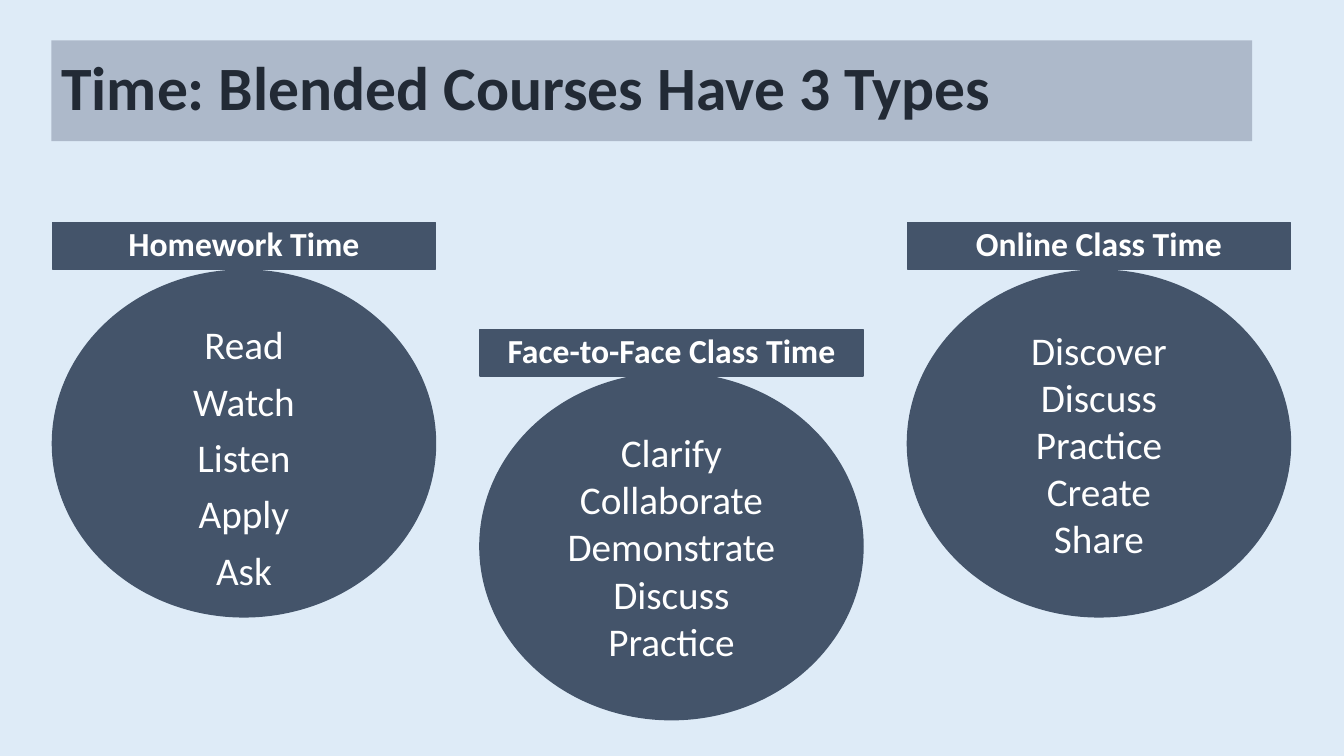
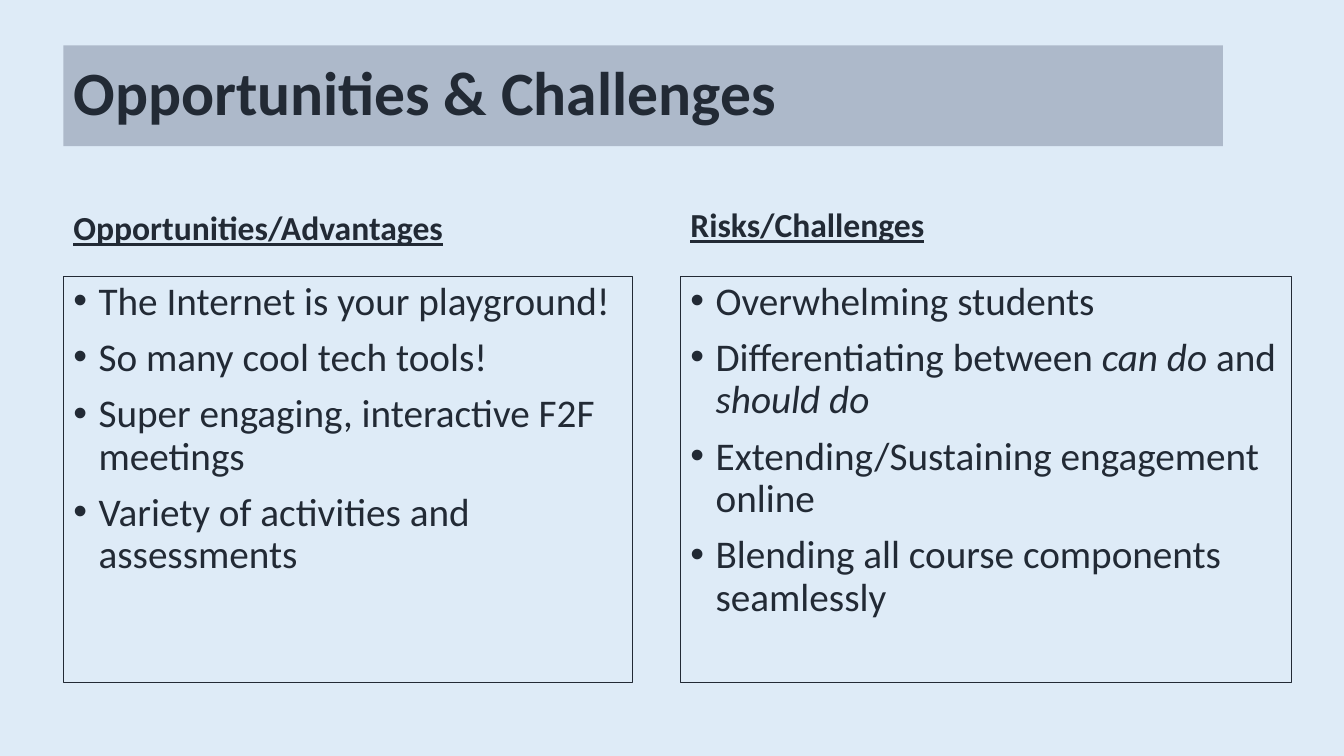
from pptx import Presentation
from pptx.dml.color import RGBColor
from pptx.enum.shapes import MSO_SHAPE as Shape
from pptx.enum.text import MSO_ANCHOR as Anchor, PP_ALIGN as Align
from pptx.oxml.ns import qn
from pptx.util import Inches, Pt
from lxml import etree

PALE_BLUE = RGBColor(0xDE, 0xEB, 0xF7)
GREY_BLUE = RGBColor(0xAD, 0xB9, 0xCA)
SLATE = RGBColor(0x44, 0x54, 0x6A)
INK = RGBColor(0x22, 0x2A, 0x35)
WHITE = RGBColor(0xFF, 0xFF, 0xFF)
FONT = "Calibri"
TIGHT = {"line_spacing": 0.9, "space_before": 10}

# Heading, heading top, circle top, activities, paragraph spacing
TIME_TYPES = [
    ("Homework Time", 2.21, 2.68,
     ["Read", "Watch", "Listen", "Apply", "Ask"], TIGHT),
    ("Face-to-Face Class Time", 3.27, 3.7,
     ["Clarify", "Collaborate", "Demonstrate", "Discuss", "Practice"], {}),
    ("Online Class Time", 2.21, 2.68,
     ["Discover", "Discuss", "Practice", "Create", "Share"], {}),
]
TYPE_LEFT, TYPE_STEP, TYPE_WIDTH = 0.52, 4.24, 3.8
HEADING_HEIGHT, CIRCLE_HEIGHT = 0.46, 3.44

# Heading, left, heading top, box width, points; in a tuple every second part is italic
COLUMNS = [
    ("Opportunities/Advantages", 0.63, 1.61, 5.64, [
        "The Internet is your playground!",
        "So many cool tech tools!",
        "Super engaging, interactive F2F meetings",
        "Variety of activities and assessments",
    ]),
    ("Risks/Challenges", 6.75, 1.58, 6.06, [
        "Overwhelming students",
        ("Differentiating between ", "can do ", "and ", "should do"),
        "Extending/Sustaining engagement online",
        "Blending all course components seamlessly",
    ]),
]
COLUMN_HEADING_HEIGHT, BOX_TOP, BOX_HEIGHT = 0.9, 2.74, 4.03


def add_box(slide, kind, left, top, width, height, fill=None, line=None, line_width=1):
    shape = slide.shapes.add_shape(
        kind, Inches(left), Inches(top), Inches(width), Inches(height))
    shape.shadow.inherit = False
    if fill is None:
        shape.fill.background()
    else:
        shape.fill.solid()
        shape.fill.fore_color.rgb = fill
    if line is None:
        shape.line.fill.background()
    else:
        shape.line.color.rgb = line
        shape.line.width = Pt(line_width)
    return shape


def add_bullet(paragraph):
    properties = paragraph._p.get_or_add_pPr()
    properties.set("marL", str(Inches(0.25)))
    properties.set("indent", str(-Inches(0.25)))
    etree.SubElement(properties, qn("a:buFont")).set("typeface", "Arial")
    etree.SubElement(properties, qn("a:buChar")).set("char", "•")


def write(shape, items, size, color, align=Align.LEFT, anchor=Anchor.TOP, bold=False,
          underline=False, bullets=False, line_spacing=1.0, space_before=0):
    """Fill a shape with one paragraph per item; an item is a string or a tuple of runs."""
    frame = shape.text_frame
    frame.word_wrap = True
    frame.vertical_anchor = anchor
    for index, item in enumerate(items):
        paragraph = frame.add_paragraph() if index else frame.paragraphs[0]
        if bullets:
            add_bullet(paragraph)
        paragraph.alignment = align
        paragraph.line_spacing = line_spacing
        paragraph.space_before = Pt(space_before if index else 0)
        parts = (item,) if isinstance(item, str) else item
        for position, text in enumerate(parts):
            run = paragraph.add_run()
            run.text = text
            font = run.font
            font.name, font.size, font.color.rgb = FONT, Pt(size), color
            font.bold, font.underline = bold, underline
            font.italic = position % 2 == 1


def add_titled_slide(presentation, title, left, top, width):
    slide = presentation.slides.add_slide(presentation.slide_layouts[6])
    band = add_box(slide, Shape.RECTANGLE, left, top, width, 1, fill=GREY_BLUE)
    write(band, [title], 44, INK, anchor=Anchor.MIDDLE, bold=True, line_spacing=0.9)
    return slide


def build_time_slide(presentation):
    slide = add_titled_slide(
        presentation, "Time: Blended Courses Have 3 Types", 0.51, 0.4, 11.91)
    for index, (name, heading_top, circle_top, activities, spacing) in enumerate(TIME_TYPES):
        left = TYPE_LEFT + index * TYPE_STEP
        circle = add_box(slide, Shape.OVAL, left, circle_top, TYPE_WIDTH, CIRCLE_HEIGHT,
                         fill=SLATE, line=SLATE)
        write(circle, activities, 28, WHITE, align=Align.CENTER, **spacing)
        heading = add_box(slide, Shape.RECTANGLE, left, heading_top, TYPE_WIDTH,
                          HEADING_HEIGHT, fill=SLATE, line=SLATE)
        write(heading, [name], 24, WHITE, align=Align.CENTER, anchor=Anchor.BOTTOM,
              bold=True, **TIGHT)


def build_challenges_slide(presentation):
    slide = add_titled_slide(presentation, "Opportunities & Challenges", 0.63, 0.45, 11.5)
    for name, left, heading_top, width, points in COLUMNS:
        heading = slide.shapes.add_textbox(
            Inches(left), Inches(heading_top), Inches(width), Inches(COLUMN_HEADING_HEIGHT))
        write(heading, [name], 24, INK, anchor=Anchor.BOTTOM, bold=True, underline=True,
              **TIGHT)
        box = add_box(slide, Shape.RECTANGLE, left, BOX_TOP, width, BOX_HEIGHT,
                      line=INK, line_width=0.75)
        write(box, points, 28, INK, bullets=True, **TIGHT)


def main():
    presentation = Presentation()
    presentation.slide_width = Inches(13.33)
    presentation.slide_height = Inches(7.5)
    background = presentation.slide_master.background.fill
    background.solid()
    background.fore_color.rgb = PALE_BLUE
    build_time_slide(presentation)
    build_challenges_slide(presentation)
    presentation.save("out.pptx")


if __name__ == "__main__":
    main()
